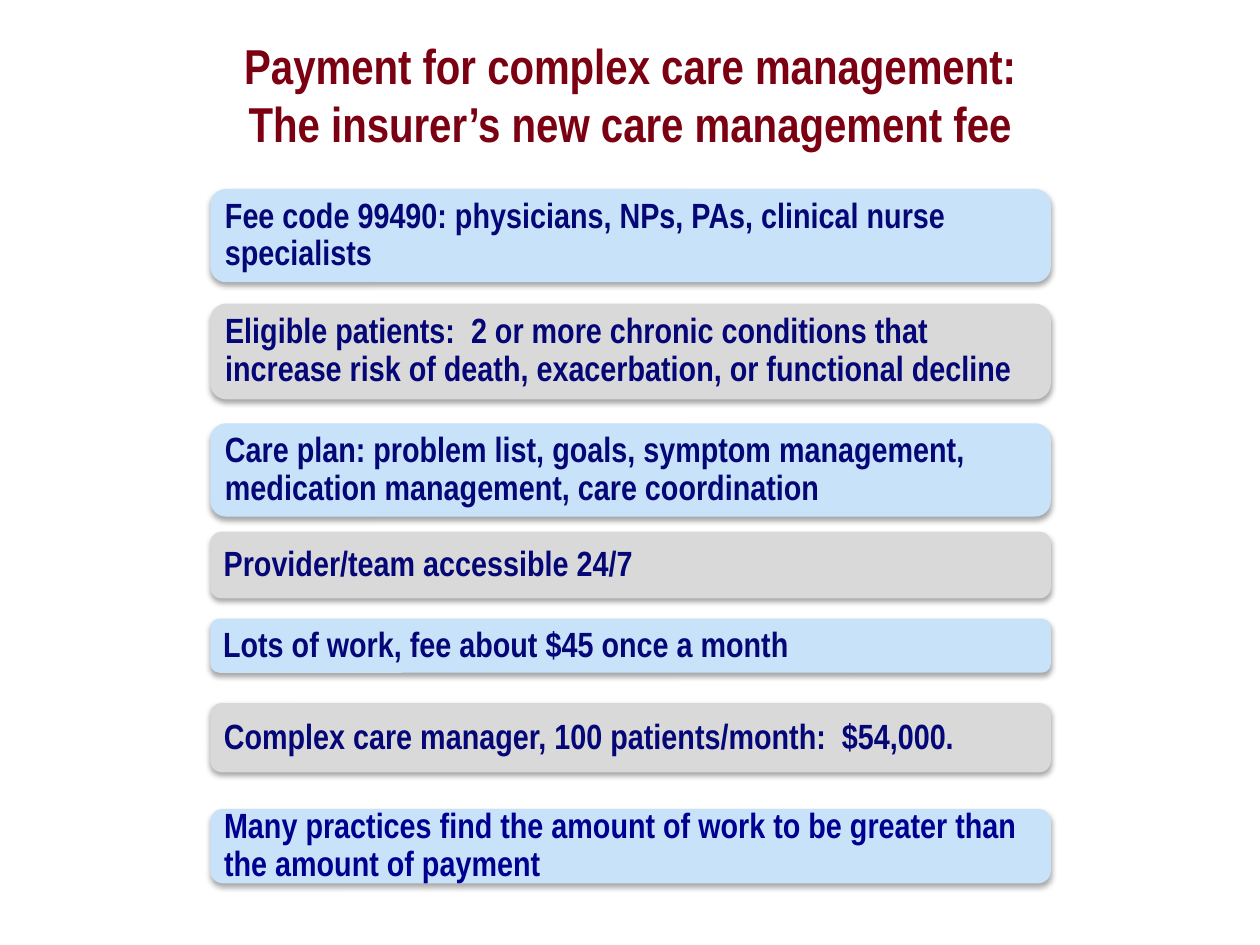
import dataclasses

import lxml.etree
import pptx
import pptx.dml.color
import pptx.enum.shapes
import pptx.enum.text
import pptx.oxml.ns
import pptx.util

Inches = pptx.util.Inches
Pt = pptx.util.Pt


@dataclasses.dataclass(frozen=True)
class Theme:
    font: str = "Arial Narrow"
    title_size: int = 28
    body_size: int = 20
    title: str = "7B0011"
    body: str = "050777"
    conclusion: str = "000090"
    bands: tuple = ("C8E2FA", "D9D9D9")
    shadow: str = "000000"


THEME = Theme()
BAND_LEFT = 1.67
BAND_WIDTH = 6.67
TITLE_LINES = (
    "Payment for complex care management:",
    "The insurer’s new care management fee",
)
BANDS = (
    (1.5, 0.74, "Fee code 99490: physicians, NPs, PAs, clinical nurse specialists"),
    (2.41, 0.76, "Eligible patients:  2 or more chronic conditions that increase "
                 "risk of death, exacerbation, or functional decline"),
    (3.36, 0.74, "Care plan: problem list, goals, symptom management, "
                 "medication management, care coordination"),
    (4.22, 0.53, "Provider/team accessible 24/7"),
    (4.91, 0.43, "Lots of work, fee about $45 once a month"),
    (5.58, 0.55, "Complex care manager, 100 patients/month:  $54,000."),
    (6.42, 0.59, "Many practices find the amount of work to be greater than "
                 "the amount of payment"),
)


def rgb(value):
    return pptx.dml.color.RGBColor.from_string(value)


def format_font(font, size, color):
    font.name = THEME.font
    font.size = Pt(size)
    font.bold = True
    font.color.rgb = rgb(color)


def add_title(slide):
    title = slide.shapes.title
    title.left, title.top = Inches(0.75), Inches(0.58)
    title.width, title.height = Inches(8.5), Inches(0.33)
    frame = title.text_frame
    frame.auto_size = pptx.enum.text.MSO_AUTO_SIZE.NONE
    frame.vertical_anchor = pptx.enum.text.MSO_ANCHOR.MIDDLE
    paragraph = frame.paragraphs[0]
    for index, line in enumerate(TITLE_LINES):
        if index:
            paragraph.add_line_break()
        paragraph.add_run().text = line
    paragraph.alignment = pptx.enum.text.PP_ALIGN.CENTER
    format_font(paragraph.font, THEME.title_size, THEME.title)


def add_shadow(shape):
    shape.shadow.inherit = False
    qn = pptx.oxml.ns.qn
    effects = shape.element.spPr.find(qn("a:effectLst"))
    shadow = lxml.etree.SubElement(
        effects, qn("a:outerShdw"), blurRad=str(Pt(3.1)), dist=str(Pt(1.8)),
        dir="5400000", rotWithShape="0")
    color = lxml.etree.SubElement(shadow, qn("a:srgbClr"), val=THEME.shadow)
    lxml.etree.SubElement(color, qn("a:alpha"), val="35000")


def add_band(slide, top, height, text, fill, color):
    band = slide.shapes.add_shape(
        pptx.enum.shapes.MSO_SHAPE.ROUNDED_RECTANGLE,
        Inches(BAND_LEFT), Inches(top), Inches(BAND_WIDTH), Inches(height))
    band.fill.solid()
    band.fill.fore_color.rgb = rgb(fill)
    band.line.fill.background()
    add_shadow(band)
    frame = band.text_frame
    frame.word_wrap = True
    frame.vertical_anchor = pptx.enum.text.MSO_ANCHOR.MIDDLE
    frame.margin_left = frame.margin_right = Inches(0.08)
    frame.margin_top = frame.margin_bottom = Inches(0.08)
    paragraph = frame.paragraphs[0]
    paragraph.text = text
    paragraph.alignment = pptx.enum.text.PP_ALIGN.LEFT
    paragraph.line_spacing = 0.9
    format_font(paragraph.font, THEME.body_size, color)


def main():
    presentation = pptx.Presentation()
    presentation.slide_width = Inches(10)
    presentation.slide_height = Inches(7.5)
    slide = presentation.slides.add_slide(presentation.slide_layouts[5])
    add_title(slide)
    for index, (top, height, text) in enumerate(BANDS):
        fill = THEME.bands[index % len(THEME.bands)]
        is_conclusion = index == len(BANDS) - 1
        color = THEME.conclusion if is_conclusion else THEME.body
        add_band(slide, top, height, text, fill, color)
    presentation.save("out.pptx")


if __name__ == "__main__":
    main()
